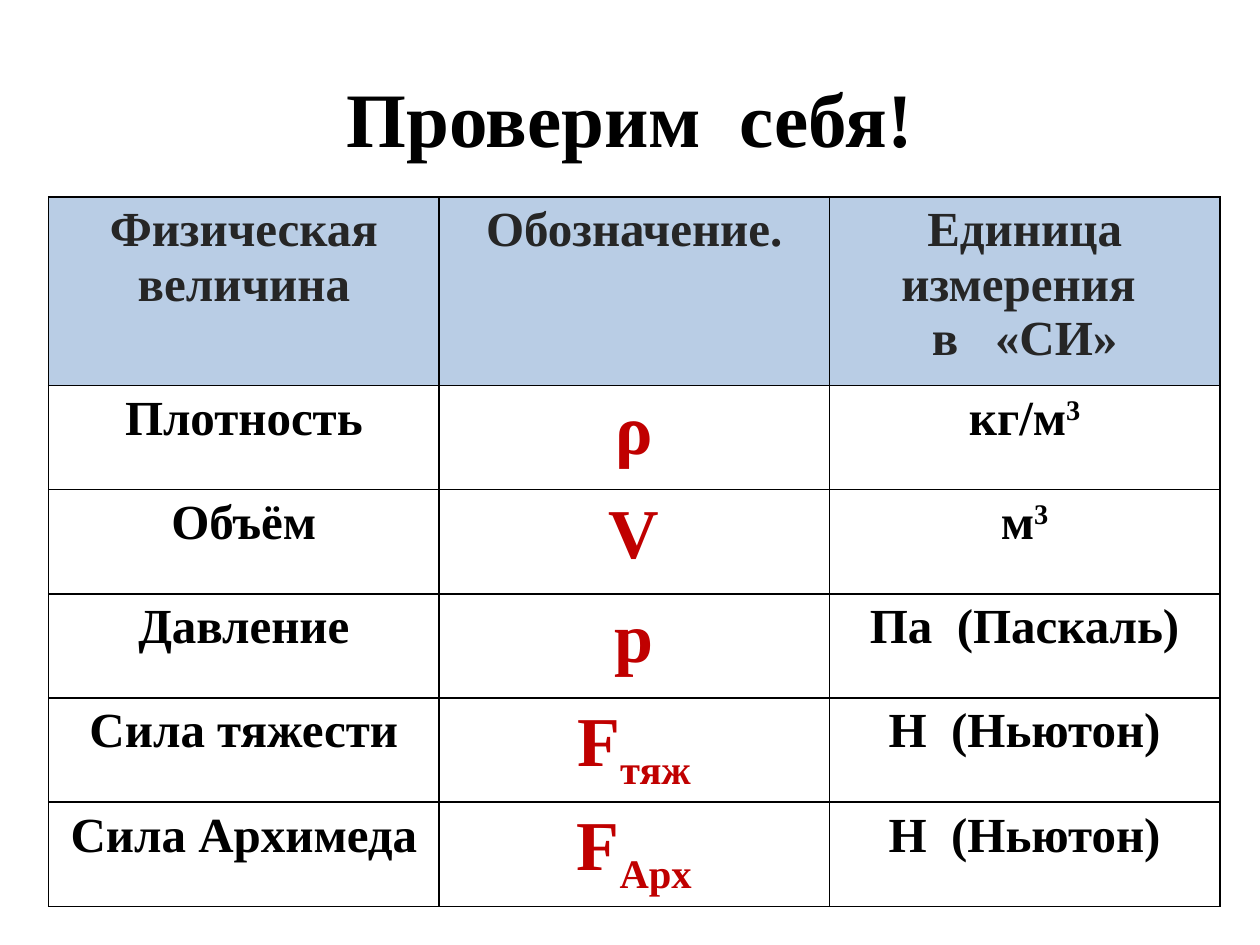
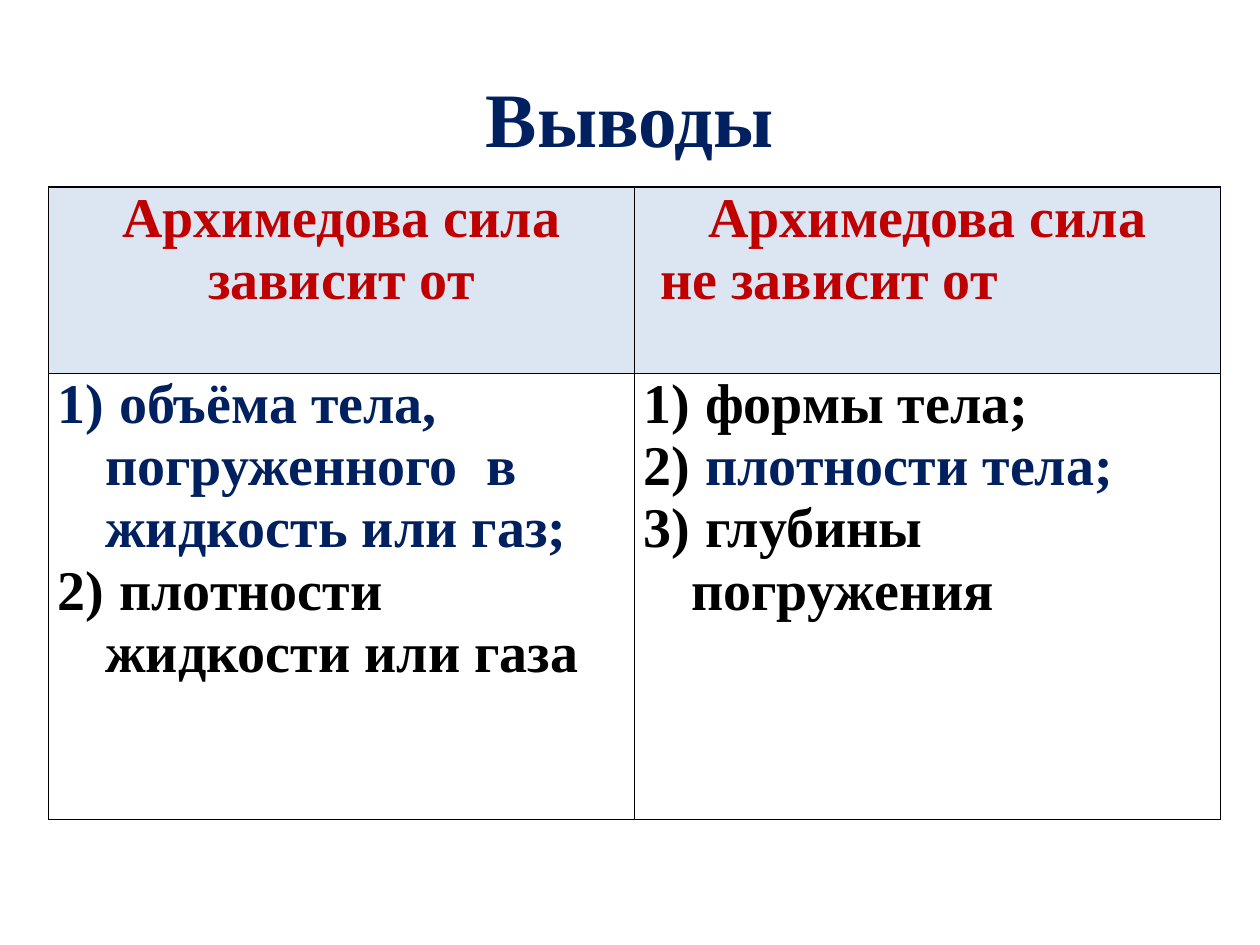
import pptx
import pptx.dml.color
import pptx.enum.text
import pptx.oxml
import pptx.oxml.ns
import pptx.util
from dataclasses import dataclass

Cm, Pt = pptx.util.Cm, pptx.util.Pt
ALIGN = pptx.enum.text.PP_ALIGN
NS = pptx.oxml.ns.nsdecls("a")


@dataclass(frozen=True)
class Theme:
    font: str = "Times New Roman"
    black: str = "000000"
    gray: str = "262626"
    red: str = "C00000"
    navy: str = "002060"
    head_blue: str = "B9CDE5"
    head_pale: str = "DCE6F2"
    title_size: int = 44
    symbol_size: int = 40
    list_size: int = 32
    table_size: int = 28
    border: float = 1


T = Theme()


def set_attrs(obj, values):
    for name, value in values.items():
        setattr(obj, name, value)


class Deck:
    """Holds the style and the current slide."""

    def __init__(self, theme):
        self.theme = theme
        self.prs = pptx.Presentation()
        set_attrs(self.prs, {"slide_width": Cm(25.4), "slide_height": Cm(19.05)})
        self.s = None

    def slide(self, title, color):
        self.s = self.prs.slides.add_slide(self.prs.slide_layouts[5])
        sp = self.s.shapes.title
        set_attrs(sp, {"left": Cm(1.27), "top": Cm(0.76),
                       "width": Cm(22.86), "height": Cm(3.18)})
        tf = sp.text_frame
        tf.vertical_anchor = pptx.enum.text.MSO_ANCHOR.MIDDLE
        self.paragraph(tf.paragraphs[0], [(title, color)], self.theme.title_size)

    def paragraph(self, p, runs, size, align=ALIGN.CENTER):
        """Each run is (text, colour) or (text, colour, baseline percent)."""
        p.alignment = align
        for text, color, *baseline in runs:
            r = p.add_run()
            r.text = text
            set_attrs(r.font, {"name": self.theme.font, "size": Pt(size), "bold": True})
            r.font.color.rgb = pptx.dml.color.RGBColor.from_string(color)
            if baseline:
                r.font._element.set("baseline", str(baseline[0] * 1000))

    def indent(self, p, left, hanging=0, numbered=False):
        pPr = p._p.get_or_add_pPr()
        pPr.set("marL", str(Cm(left)))
        pPr.set("indent", str(-Cm(hanging)))
        if numbered:
            pPr.append(pptx.oxml.parse_xml(f'<a:buFont {NS} typeface="+mj-lt"/>'))
            pPr.append(pptx.oxml.parse_xml(f'<a:buAutoNum {NS} type="arabicParenR"/>'))

    def table(self, top, widths, heights, head_fill, margins=None):
        frame = self.s.shapes.add_table(len(heights), len(widths), Cm(0.98), Cm(top),
                                        Cm(sum(widths)), Cm(sum(heights)))
        tbl = frame.table
        set_attrs(tbl, {"first_row": False, "horz_banding": False})
        for col, width in zip(tbl.columns, widths):
            col.width = Cm(width)
        for i, (row, height) in enumerate(zip(tbl.rows, heights)):
            row.height = Cm(height)
            for cell in row.cells:
                set_attrs(cell, margins or {})
                self.borders(cell)
                if i == 0:
                    cell.fill.solid()
                    cell.fill.fore_color.rgb = pptx.dml.color.RGBColor.from_string(head_fill)
                else:
                    cell.fill.background()
        return tbl

    def borders(self, cell):
        tcPr = cell._tc.get_or_add_tcPr()
        for side in "LRTB":
            tcPr.append(pptx.oxml.parse_xml(
                f'<a:ln{side} {NS} w="{Pt(self.theme.border)}"><a:solidFill>'
                f'<a:srgbClr val="{self.theme.black}"/></a:solidFill></a:ln{side}>'))

    def fill_cell(self, cell, paragraphs, size, **kwargs):
        """Write paragraphs into a cell and return them."""
        tf = cell.text_frame
        for i, runs in enumerate(paragraphs):
            p = tf.add_paragraph() if i else tf.paragraphs[0]
            self.paragraph(p, runs, size, **kwargs)
        return tf.paragraphs


def quantities_slide(deck):
    deck.slide("Проверим  себя!", T.black)
    tbl = deck.table(3.97, [7.87] * 3, [3.8] + [2.1] * 5, T.head_blue)

    # Header row
    heads = [["Физическая величина"], ["Обозначение."],
             ["Единица измерения ", "в   «СИ»"]]
    for col, lines in enumerate(heads):
        deck.fill_cell(tbl.cell(0, col), [[(line, T.gray)] for line in lines], T.table_size)

    # Quantity, symbol, subscript, unit, superscript
    rows = [("Плотность", "ρ", "", "кг/м", "3"),
            ("Объём", "V", "", "м", "3"),
            ("Давление", "р", "", "Па  (Паскаль)", ""),
            ("Сила тяжести", "F", "тяж", "Н  (Ньютон)", ""),
            ("Сила Архимеда", "F", "Арх", "Н  (Ньютон)", "")]
    for i, (quantity, symbol, sub, unit, power) in enumerate(rows, 1):
        symbol_runs = [(symbol, T.red)] + ([(sub, T.red, -25)] if sub else [])
        unit_runs = [(unit, T.black)] + ([(power, T.black, 30)] if power else [])
        deck.fill_cell(tbl.cell(i, 0), [[(quantity, T.black)]], T.table_size)
        deck.fill_cell(tbl.cell(i, 1), [symbol_runs], T.symbol_size)
        deck.fill_cell(tbl.cell(i, 2), [unit_runs], T.table_size)


def conclusions_slide(deck):
    deck.slide("Выводы", T.navy)
    margins = {"margin_left": Cm(0.18), "margin_right": Cm(0.18),
               "margin_top": 0, "margin_bottom": 0}
    tbl = deck.table(3.77, [11.81] * 2, [3.76, 8.99], T.head_pale, margins)

    # Header row
    deck.fill_cell(tbl.cell(0, 0), [[("Архимедова сила зависит от", T.red)]], T.list_size)
    ps = deck.fill_cell(tbl.cell(0, 1), [[("Архимедова сила", T.red)],
                                         [("не зависит от", T.red)]], T.list_size)
    ps[1].alignment = ALIGN.LEFT
    deck.indent(ps[1], 0.34)

    # Numbered lists
    lists = [[[(" объёма тела, погруженного  в жидкость или газ;", T.navy)],
              [(" плотности жидкости или газа", T.black)]],
             [[(" формы тела;", T.black)],
              [(" ", T.black), ("плотности тела;", T.navy)],
              [(" глубины погружения", T.black)]]]
    for col, items in enumerate(lists):
        for p in deck.fill_cell(tbl.cell(1, col), items, T.list_size, align=ALIGN.LEFT):
            deck.indent(p, 0.96, hanging=0.96, numbered=True)


def main():
    deck = Deck(T)
    quantities_slide(deck)
    conclusions_slide(deck)
    deck.prs.save("out.pptx")


if __name__ == "__main__":
    main()
